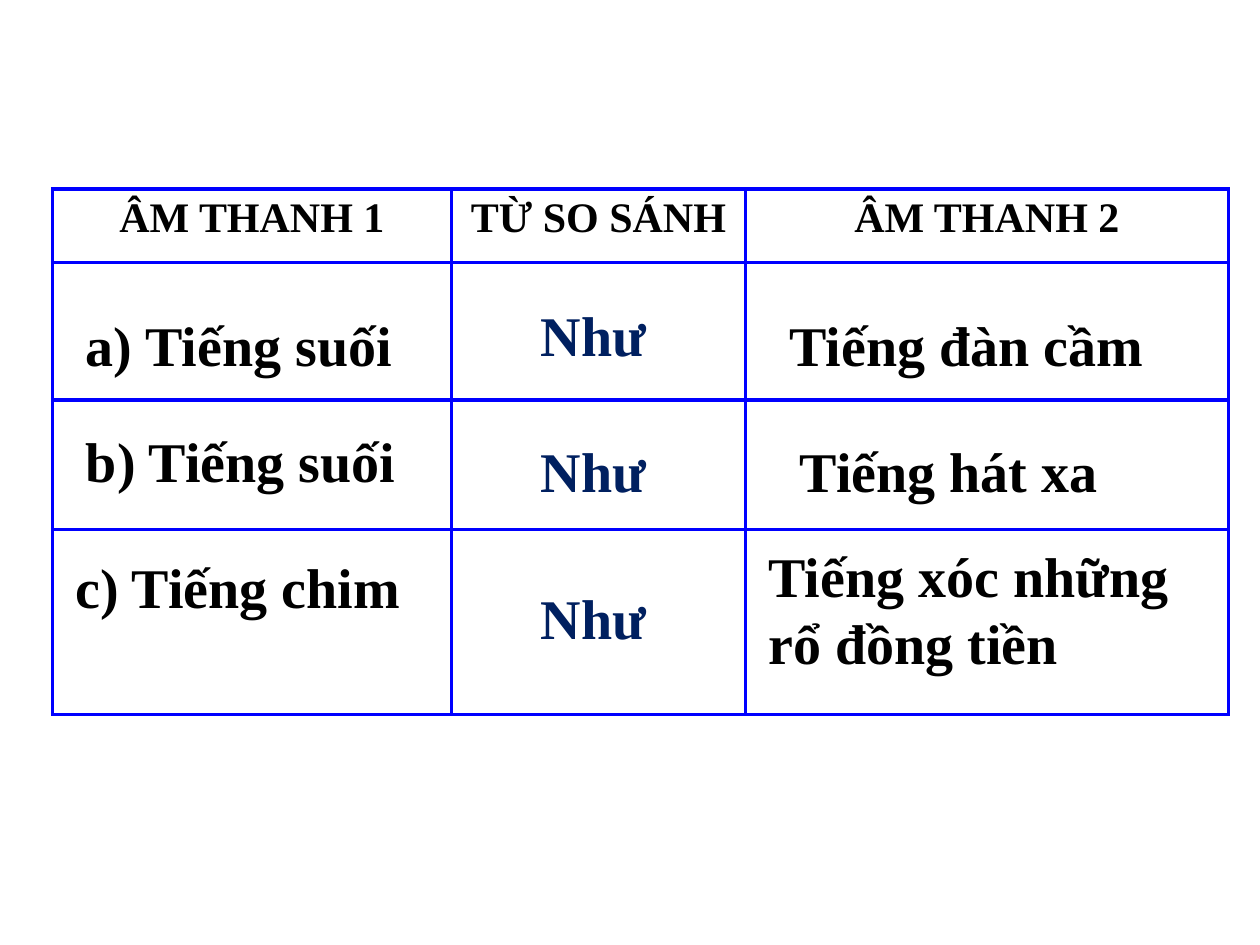
from dataclasses import dataclass

from lxml.etree import SubElement
from pptx import Presentation
from pptx.dml.color import RGBColor as Color
from pptx.enum.text import MSO_AUTO_SIZE as AutoSize, PP_ALIGN as Align
from pptx.oxml import parse_xml
from pptx.oxml.ns import nsdecls, qn
from pptx.util import Pt


@dataclass(frozen=True)
class Theme:
    font: str = "Times New Roman"
    header_size: int = 24
    body_size: int = 32
    ink: str = "000000"
    accent: str = "002060"
    paper: str = "FFFFFF"
    border: str = "0000FF"
    border_width: float = 2.25


THEME = Theme()
HEADERS = ["ÂM THANH 1", "TỪ SO SÁNH", "ÂM THANH 2"]
COLUMN_WIDTHS = [228, 168, 276]
ROW_HEIGHTS = [42, 78.5, 74, 105.75]
SOUNDS = [
    ("a) Tiếng suối", 42, 174, 210),
    ("b) Tiếng suối", 42, 240, 198),
    ("c) Tiếng chim", 36, 312, 210),
    ("Tiếng đàn cầm", 444, 174, 234),
    ("Tiếng hát xa", 450, 246, 222),
    ("Tiếng xóc những rổ đồng tiền", 432, 306, 270),
]
COMPARISON_TOPS = [168, 246, 330]


def write_text(frame, text, size, color, align=Align.LEFT):
    para = frame.paragraphs[0]
    para.alignment = align
    span = para.add_run()
    span.text = text
    for name, value in {"name": THEME.font, "size": Pt(size), "bold": True}.items():
        setattr(span.font, name, value)
    span.font.color.rgb = Color.from_string(color)
    return para


def style_cell(cell):
    cell.fill.solid()
    cell.fill.fore_color.rgb = Color.from_string(THEME.paper)
    properties = cell._tc.get_or_add_tcPr()
    for index, side in enumerate(["lnL", "lnR", "lnT", "lnB"]):
        line = parse_xml(f'<a:{side} {nsdecls("a")} w="{Pt(THEME.border_width)}"/>')
        fill = SubElement(line, qn("a:solidFill"))
        SubElement(fill, qn("a:srgbClr"), val=THEME.border)
        properties.insert(index, line)


def add_grid(page):
    frame = page.shapes.add_table(
        len(ROW_HEIGHTS), len(COLUMN_WIDTHS), Pt(30), Pt(108),
        Pt(sum(COLUMN_WIDTHS)), Pt(sum(ROW_HEIGHTS)))
    table = frame.table
    for column, width in zip(table.columns, COLUMN_WIDTHS):
        column.width = Pt(width)
    for row, height in zip(table.rows, ROW_HEIGHTS):
        row.height = Pt(height)
    for cell in table.iter_cells():
        style_cell(cell)
    for cell, text in zip(table.rows[0].cells, HEADERS):
        para = write_text(cell.text_frame, text, THEME.header_size, THEME.ink, Align.CENTER)
        para.space_before = Pt(0.2 * THEME.header_size)


def add_label(page, text, left, top, width, color=THEME.ink, align=Align.LEFT):
    box = page.shapes.add_textbox(Pt(left), Pt(top), Pt(width), Pt(46))
    frame = box.text_frame
    for name, value in {"word_wrap": True, "auto_size": AutoSize.SHAPE_TO_FIT_TEXT}.items():
        setattr(frame, name, value)
    write_text(frame, text, THEME.body_size, color, align)


def main():
    deck = Presentation()
    deck.slide_width, deck.slide_height = Pt(720), Pt(540)
    page = deck.slides.add_slide(deck.slide_layouts[6])
    add_grid(page)
    for text, left, top, width in SOUNDS:
        add_label(page, text, left, top, width)
    for top in COMPARISON_TOPS:
        add_label(page, "Như", 294, top, 90, THEME.accent, Align.CENTER)
    deck.save("out.pptx")


if __name__ == "__main__":
    main()
